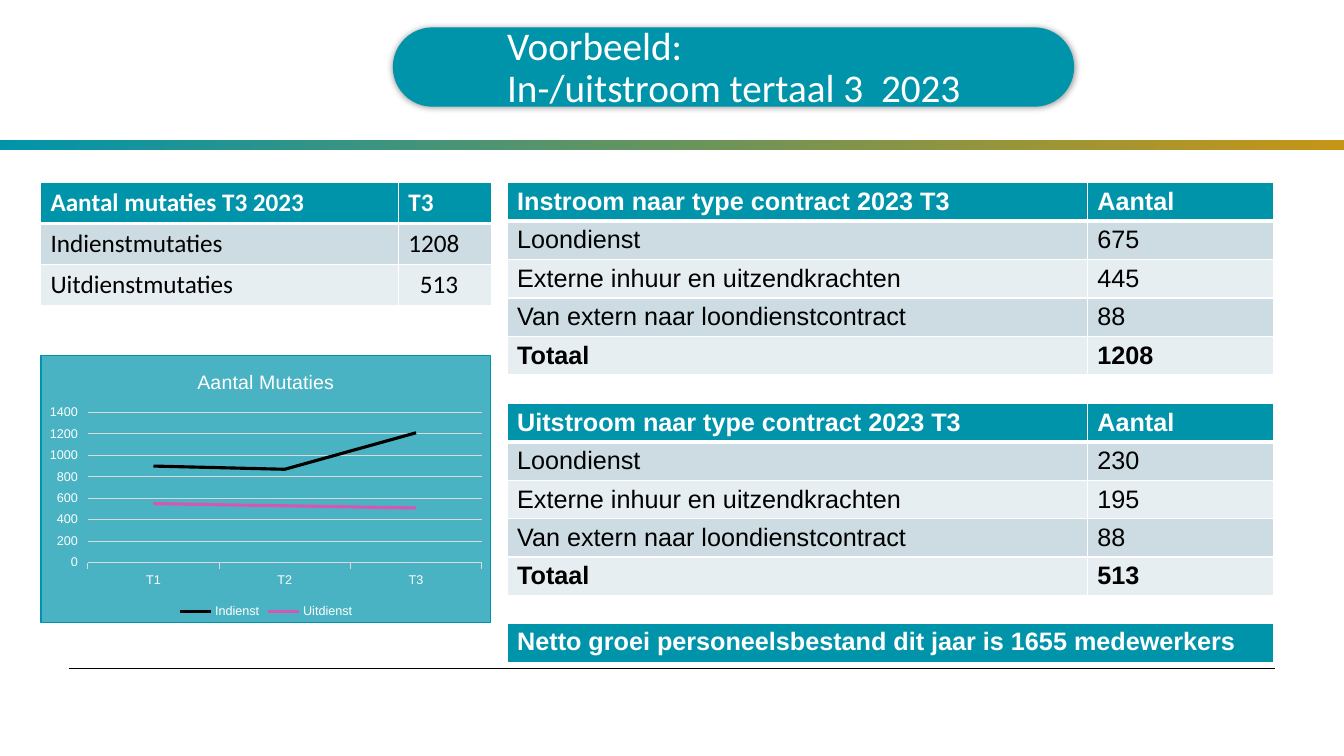
from pptx import Presentation, util as u
from pptx.chart.data import CategoryChartData
from pptx.dml.color import RGBColor
from pptx.enum import chart as charts, shapes, text
from pptx.oxml import parse_xml
from pptx.oxml.ns import qn

NS = 'xmlns:a="http://schemas.openxmlformats.org/drawingml/2006/main"'
CHART_NS = 'xmlns:c="http://schemas.openxmlformats.org/drawingml/2006/chart"'
COLOURS = {
    "teal": "0094AB",
    "green": "5F9464",
    "gold": "C59517",
    "white": "FFFFFF",
    "black": "000000",
    "band": "CCDCE2",
    "light": "E7EEF1",
    "grid": "D9D9D9",
    "pink": "D855B2",
}


def colour(name):
    return RGBColor.from_string(COLOURS[name])


def style_font(font, size=18, face="Arial", ink="white", bold=False):
    font.size = u.Pt(size)
    font.name = face
    font.bold = bold
    font.color.rgb = colour(ink)


def write(frame, words, spacing=None, **style):
    para = frame.paragraphs[0]
    para.text = words
    para.alignment = text.PP_ALIGN.LEFT
    para.line_spacing = spacing
    for span in para.runs:
        style_font(span.font, **style)


class SlideBuilder:
    def __init__(self, deck):
        self.page = deck.slides.add_slide(deck.slide_layouts[5])

    def shape(self, kind, *place):
        box = self.page.shapes.add_shape(kind, *map(u.Cm, place))
        box.shadow.inherit = False
        box.line.fill.background()
        return box

    def gradient_bar(self, *place, stops):
        bar = self.shape(shapes.MSO_SHAPE.RECTANGLE, *place)
        marks = "".join(
            f'<a:gs pos="{percent * 1000}"><a:srgbClr val="{COLOURS[name]}"/></a:gs>'
            for percent, name in stops
        )
        geometry = bar.element.spPr.find(qn("a:prstGeom"))
        geometry.addnext(parse_xml(
            f'<a:gradFill {NS} rotWithShape="1"><a:gsLst>{marks}</a:gsLst>'
            '<a:lin ang="0" scaled="0"/></a:gradFill>'
        ))

    def rule(self, *ends):
        line = self.page.shapes.add_connector(shapes.MSO_CONNECTOR.STRAIGHT, *map(u.Cm, ends))
        line.line.color.rgb = colour("black")
        line.line.width = u.Pt(0.5)
        line.element.spPr.append(parse_xml(f"<a:effectLst {NS}/>"))

    def pill(self, *place):
        box = self.shape(shapes.MSO_SHAPE.ROUNDED_RECTANGLE, *place)
        box.adjustments[0] = 0.5
        box.fill.solid()
        box.fill.fore_color.rgb = colour("teal")
        effects = box.element.spPr.find(qn("a:effectLst"))
        effects.append(parse_xml(
            f'<a:outerShdw {NS} blurRad="{u.Pt(5)}" dist="0" dir="0" algn="ctr" rotWithShape="0">'
            '<a:srgbClr val="000000"><a:alpha val="40000"/></a:srgbClr></a:outerShdw>'
        ))

    def title(self, words, *place):
        box = self.page.shapes.title
        box.left, box.top, box.width, box.height = map(u.Cm, place)
        frame = box.text_frame
        frame.margin_left = frame.margin_right = frame.margin_top = frame.margin_bottom = 0
        frame.vertical_anchor = text.MSO_ANCHOR.MIDDLE
        frame.auto_size = text.MSO_AUTO_SIZE.NONE
        frame.word_wrap = True
        write(frame, words, spacing=0.9, size=28, face="Calibri")
        self.page.shapes._spTree.append(box.element)

    def border(self, cell, header):
        properties = cell._tc.get_or_add_tcPr()
        for side in "LRTB":
            width = u.Pt(3 if header and side == "B" else 1)
            properties.append(parse_xml(
                f'<a:ln{side} {NS} w="{width}"><a:solidFill>'
                f'<a:srgbClr val="{COLOURS["white"]}"/></a:solidFill></a:ln{side}>'
            ))

    def table(self, rows, left, top, widths, row_height, face="Arial"):
        frame = self.page.shapes.add_table(
            len(rows), len(widths), u.Cm(left), u.Cm(top),
            u.Cm(sum(widths)), u.Cm(row_height * len(rows)),
        )
        grid = frame.table
        for column, width in zip(grid.columns, widths):
            column.width = u.Cm(width)
        for r, row in enumerate(rows):
            header = r == 0
            fill = "teal" if header else ("light", "band")[r % 2]
            for c, words in enumerate(row):
                cell = grid.cell(r, c)
                self.border(cell, header)
                cell.fill.solid()
                cell.fill.fore_color.rgb = colour(fill)
                write(cell.text_frame, words, face=face,
                      ink="white" if header else "black",
                      bold=header or row[0] == "Totaal")
        return grid

    def line_chart(self, heading, categories, series, *place):
        data = CategoryChartData()
        data.categories = categories
        for name, values, _ in series:
            data.add_series(name, values)
        chart = self.page.shapes.add_chart(
            charts.XL_CHART_TYPE.LINE, *map(u.Cm, place), data
        ).chart
        style_font(chart.font, size=10, ink="black")
        chart.has_title = True
        write(chart.chart_title.text_frame, heading, size=14)
        chart.chart_title.include_in_layout = False
        chart.has_legend = True
        chart.legend.position = charts.XL_LEGEND_POSITION.BOTTOM
        chart.legend.include_in_layout = False
        style_font(chart.legend.font, size=9)
        for axis in (chart.category_axis, chart.value_axis):
            style_font(axis.tick_labels.font, size=9)
            axis.major_tick_mark = charts.XL_TICK_MARK.OUTSIDE
        values_axis = chart.value_axis
        values_axis.minimum_scale, values_axis.maximum_scale = 0, 1400
        values_axis.major_unit = 200
        values_axis.format.line.fill.background()
        for line in (chart.category_axis.format.line, values_axis.major_gridlines.format.line):
            line.color.rgb = colour("grid")
            line.width = u.Pt(0.75)
        chart.plots[0].vary_by_categories = False
        for plotted, (_, _, ink) in zip(chart.plots[0].series, series):
            plotted.smooth = False
            plotted.marker.style = charts.XL_MARKER_STYLE.NONE
            plotted.format.line.color.rgb = colour(ink)
            plotted.format.line.width = u.Pt(2.25)
        teal = COLOURS["teal"]
        chart.element.find(qn("c:chart")).addnext(parse_xml(
            f'<c:spPr {CHART_NS} {NS}><a:solidFill><a:srgbClr val="{teal}">'
            '<a:alpha val="71000"/></a:srgbClr></a:solidFill>'
            f'<a:ln w="{u.Pt(0.75)}"><a:solidFill><a:srgbClr val="{teal}"/>'
            '</a:solidFill></a:ln></c:spPr>'
        ))


def contract_rows(direction, *amounts):
    labels = ("Loondienst", "Externe inhuur en uitzendkrachten",
              "Van extern naar loondienstcontract", "Totaal")
    heading = (f"{direction} naar type contract 2023 T3", "Aantal")
    return [heading, *zip(labels, map(str, (*amounts, sum(amounts))))]


def main():
    deck = Presentation()
    deck.slide_width, deck.slide_height = u.Cm(33.87), u.Cm(19.05)
    slide = SlideBuilder(deck)
    slide.gradient_bar(0, 3.53, 33.87, 0.25, stops=[(0, "teal"), (45, "green"), (100, "gold")])
    slide.rule(1.73, 16.84, 32.13, 16.84)
    slide.pill(9.9, 0.69, 17.17, 2)
    slide.title("Voorbeeld:\vIn-/uitstroom tertaal 3  2023", 12.78, 0.76, 11.89, 1.93)

    mutations = slide.table(
        [("Aantal mutaties T3 2023", "T3"), ("Indienstmutaties", "1208"), ("Uitdienstmutaties", "513")],
        1.02, 4.6, (9.02, 2.34), 1.03, face="Calibri",
    )
    mutations.cell(2, 1).margin_left = u.Cm(0.54)

    left, widths = 12.78, (14.62, 4.7)
    slide.table(contract_rows("Uitstroom", 230, 195, 88), left, 10.16, widths, 0.97)
    slide.table(contract_rows("Instroom", 675, 445, 88), left, 4.6, widths, 0.97)
    slide.line_chart(
        "Aantal Mutaties", ("T1", "T2", "T3"),
        [("Indienst", (900, 870, 1210), "black"), ("Uitdienst", (550, 530, 510), "pink")],
        1.02, 8.94, 11.36, 6.76,
    )
    slide.table([("Netto groei personeelsbestand dit jaar is 1655 medewerkers",)],
                left, 15.7, (sum(widths),), 1.03)
    deck.save("out.pptx")


if __name__ == "__main__":
    main()
